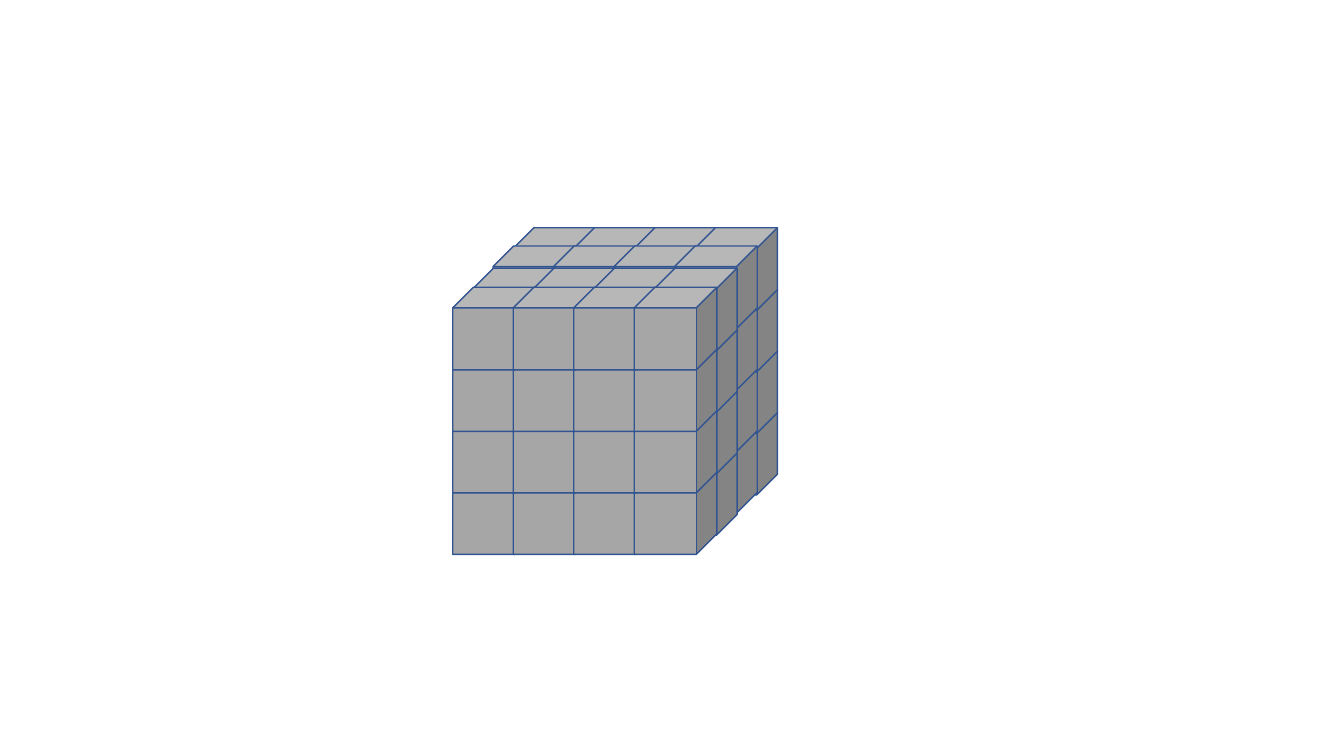
from pptx import Presentation
from pptx.dml.color import RGBColor
from pptx.enum.shapes import MSO_SHAPE
from pptx.util import Inches, Pt

CUBE = MSO_SHAPE.CUBE
COLORS = {"face": "A6A6A6", "edge": "325491"}
LAYERS = COLUMNS = 4
DEPTH_DROPS = (0, 0.18, 0.4, 0.59)


class CubeStack:
    left, top = 5.09, 2.26
    column_width, layer_height = 0.6, 0.61
    depth_shift = 0.2
    cube_size = 0.82
    edge_width = Pt(1)

    def __init__(self, slide):
        self.slide = slide

    def cube(self, group, column, level, depth):
        x = self.left + column * self.column_width - depth * self.depth_shift
        y = self.top + level * self.layer_height + DEPTH_DROPS[depth]
        block = group.shapes.add_shape(
            CUBE, Inches(x), Inches(y), Inches(self.cube_size), Inches(self.cube_size)
        )
        block.shadow.inherit = False
        block.fill.solid()
        block.fill.fore_color.rgb = RGBColor.from_string(COLORS["face"])
        block.line.color.rgb = RGBColor.from_string(COLORS["edge"])
        block.line.width = self.edge_width

    def layer(self, level):
        group = self.slide.shapes.add_group_shape()
        for depth in range(len(DEPTH_DROPS)):
            for column in range(COLUMNS):
                self.cube(group, column, level, depth)


def main():
    presentation = Presentation()
    presentation.slide_width = Inches(13.33)
    presentation.slide_height = Inches(7.5)
    stack = CubeStack(presentation.slides.add_slide(presentation.slide_layouts[6]))
    for level in reversed(range(LAYERS)):
        stack.layer(level)
    presentation.save("out.pptx")


if __name__ == "__main__":
    main()
